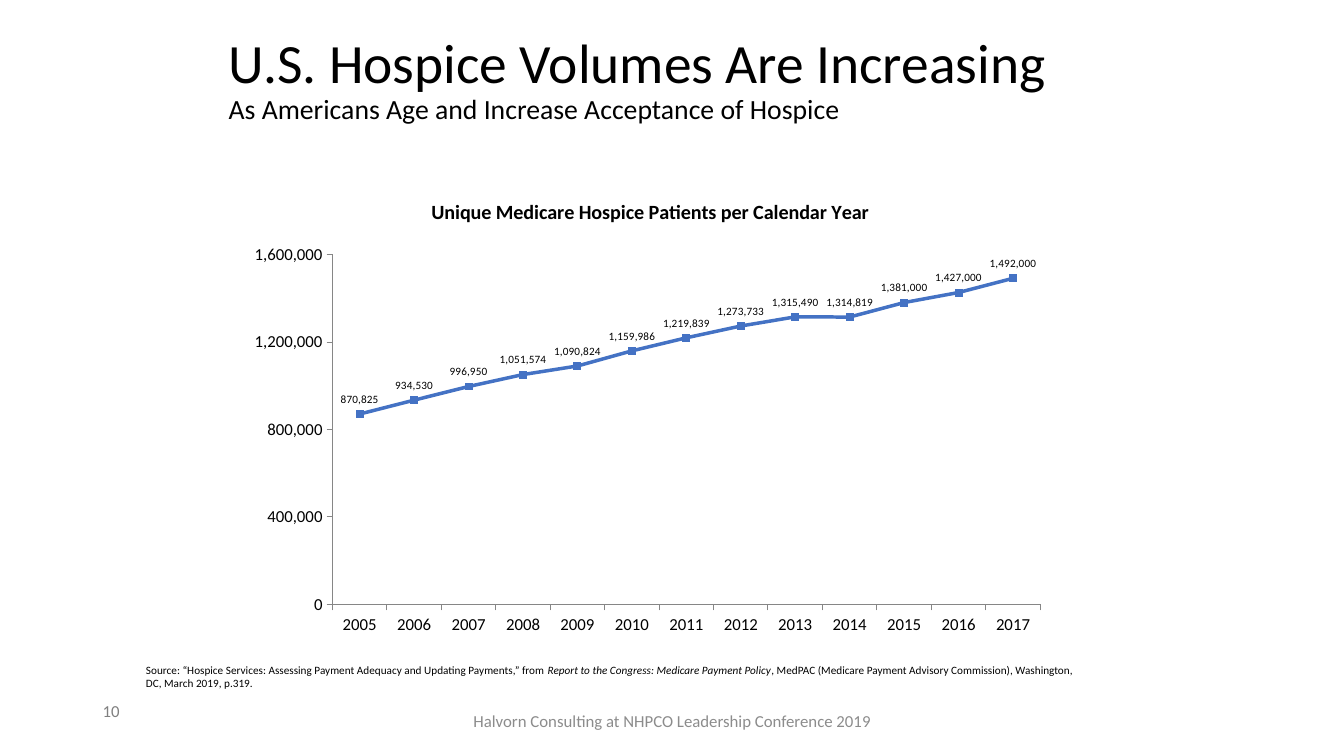
from pptx import Presentation
from pptx.chart.data import CategoryChartData
from pptx.dml.color import RGBColor
from pptx.enum.chart import XL_CHART_TYPE as ChartType, XL_LABEL_POSITION as LabelPos, XL_TICK_MARK as Tick
from pptx.enum.text import MSO_ANCHOR as Anchor, PP_ALIGN as Align
from pptx.oxml import parse_xml
from pptx.oxml.ns import nsdecls, qn
from pptx.util import Pt

COLORS = {"ink": "000000", "number": "808080", "footer": "8C8C8C", "axis": "868686", "volume": "4472C4"}
FIRST_YEAR = 2005
PATIENTS = [870825, 934530, 996950, 1051574, 1090824, 1159986, 1219839,
            1273733, 1315490, 1314819, 1381000, 1427000, 1492000]


def apply(target, values):
    for name, value in values.items():
        setattr(target, name, value)


def set_layout(parent, index, **parts):
    for old in parent.findall(qn("c:layout")):
        parent.remove(old)
    tags = "".join(f'<c:{tag} val="{value}"/>' for tag, value in parts.items())
    parent.insert(index, parse_xml(
        f'<c:layout {nsdecls("c")}><c:manualLayout>{tags}</c:manualLayout></c:layout>'))


class SlideBuilder:
    def __init__(self, slide, font="Calibri"):
        self.slide = slide
        self.font = font

    def style(self, font, size, color="ink", **extra):
        apply(font, {"name": self.font, "size": Pt(size), **extra})
        font.color.rgb = RGBColor.from_string(COLORS[color])

    def text(self, box, lines, color="ink", align=Align.LEFT, anchor=Anchor.TOP, spacing=1.0):
        frame = self.slide.shapes.add_textbox(*map(Pt, box)).text_frame
        apply(frame, {"word_wrap": True, "vertical_anchor": anchor})
        paragraph = frame.paragraphs[0]
        apply(paragraph, {"alignment": align, "line_spacing": spacing})
        for number, line in enumerate(lines):
            if number:
                paragraph.add_line_break()
            for words, size, italic in line:
                run = paragraph.add_run()
                run.text = words
                self.style(run.font, size, color, italic=italic)

    def line_chart(self, box, heading, categories, values):
        data = CategoryChartData(number_format="#,##0")
        data.categories = categories
        data.add_series("Series 1", values)
        chart = self.slide.shapes.add_chart(ChartType.LINE, *map(Pt, box), data).chart
        apply(chart, {"has_legend": False, "has_title": True})
        self.style(chart.font, 12)

        title = chart.chart_title
        title.text_frame.text = heading
        self.style(title.text_frame.paragraphs[0].runs[0].font, 14.4, bold=True)
        set_layout(title._element, 1, xMode="edge", yMode="edge", x=0.22, y=0.05)
        set_layout(chart._chartSpace.chart.plotArea, 0, layoutTarget="inner", xMode="edge",
                   yMode="edge", x=0.106, y=0.178, w=0.847, h=0.746)

        for axis in (chart.category_axis, chart.value_axis):
            apply(axis, {"has_major_gridlines": False, "major_tick_mark": Tick.OUTSIDE,
                         "minor_tick_mark": Tick.NONE})
            axis.format.line.width = Pt(0.75)
            axis.format.line.color.rgb = RGBColor.from_string(COLORS["axis"])
            self.style(axis.tick_labels.font, 12)
        apply(chart.value_axis, {"minimum_scale": 0, "maximum_scale": 1600000, "major_unit": 400000})
        apply(chart.value_axis.tick_labels, {"number_format": "#,##0", "number_format_is_linked": False})

        plot = chart.plots[0]
        plot.vary_by_categories = False
        volume = plot.series[0]
        volume.smooth = False
        volume.marker.style = None
        volume.format.line.width = Pt(2.5)
        volume.format.line.color.rgb = RGBColor.from_string(COLORS["volume"])
        labels = volume.data_labels
        apply(labels, {"show_value": True, "position": LabelPos.ABOVE,
                       "number_format": "#,##0", "number_format_is_linked": False})
        self.style(labels.font, 8)


def main():
    deck = Presentation()
    apply(deck, {"slide_width": Pt(960), "slide_height": Pt(540)})
    page = SlideBuilder(deck.slides.add_slide(deck.slide_layouts[6]))

    page.text((156.24, 18.72, 676, 77.76),
              [[("U.S. Hospice Volumes Are Increasing", 39.6, False)],
               [("As Americans Age and Increase Acceptance of Hospice", 19.8, False)]],
              anchor=Anchor.MIDDLE, spacing=0.9)
    years = [str(FIRST_YEAR + offset) for offset in range(len(PATIENTS))]
    page.line_chart((174.24, 122.4, 596.88, 334.8),
                    "Unique Medicare Hospice Patients per Calendar Year", years, PATIENTS)
    page.text((66.24, 496.8, 216, 28.8), [[("10", 12, False)]], "number")
    page.text((318.24, 500.4, 324, 28.8),
              [[("Halvorn Consulting at NHPCO Leadership Conference 2019", 12, False)]],
              "footer", Align.CENTER, Anchor.MIDDLE)
    page.text((97.2, 470.16, 679.68, 26.64),
              [[("Source: “Hospice Services: Assessing Payment Adequacy and Updating Payments,” from ", 8, False),
                ("Report to the Congress: Medicare Payment Policy", 8, True),
                (", MedPAC (Medicare Payment Advisory Commission), Washington, DC, March 2019, p.319.", 8, False)]])
    deck.save("out.pptx")


if __name__ == "__main__":
    main()
